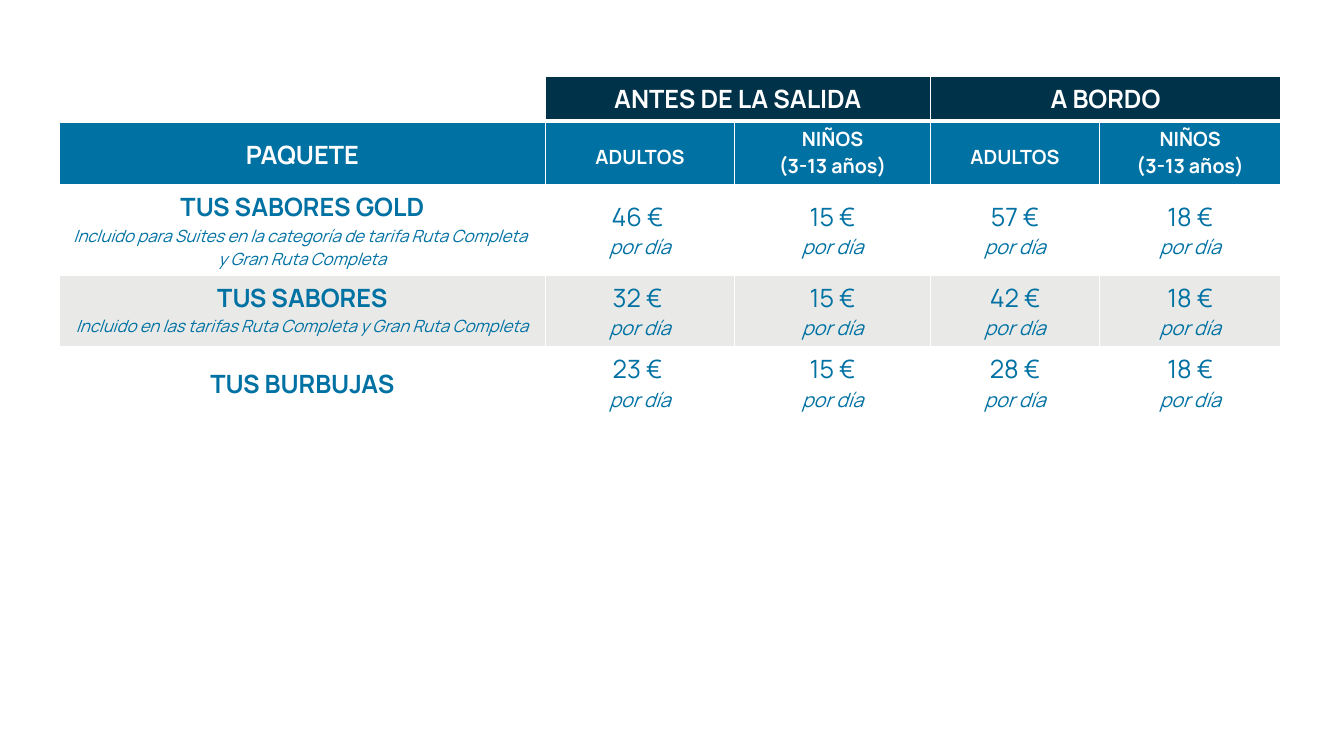
import pptx
import pptx.dml.color
import pptx.enum.text
import pptx.oxml
import pptx.oxml.ns
import pptx.util

Pt = pptx.util.Pt
RGBColor = pptx.dml.color.RGBColor

WHITE = RGBColor(0xFF, 0xFF, 0xFF)
NAVY = RGBColor(0x00, 0x32, 0x4A)
BLUE = RGBColor(0x00, 0x71, 0xA3)
GREY = RGBColor(0xE9, 0xEA, 0xE8)

# Text styles: font attributes
GROUP = {"size": Pt(18), "bold": True, "italic": False}
HEADING = {"size": Pt(14), "bold": True, "italic": False}
PRICE = {"size": Pt(18), "bold": False, "italic": False}
PERIOD = {"size": Pt(14), "bold": False, "italic": True}
NOTE = {"size": Pt(12), "bold": False, "italic": True}


class PriceSlide:
    """Holds the font and the slide, and adds styled elements to it."""

    font_name = "Manrope"
    inset = 3.6

    def __init__(self, presentation):
        self.slide = presentation.slides.add_slide(presentation.slide_layouts[6])

    def table(self, left, top, widths, heights, frame_height):
        frame = self.slide.shapes.add_table(
            len(heights), len(widths), Pt(left), Pt(top), Pt(sum(widths)), Pt(frame_height))
        grid = frame.table
        grid.first_row = grid.horz_banding = False
        for column, width in zip(grid.columns, widths):
            column.width = Pt(width)
        for row, height in zip(grid.rows, heights):
            row.height = Pt(height)
        frame.height = Pt(frame_height)
        return grid

    def cell(self, cell, fill, lines=(), color=BLUE, drop=0, top=1, bottom=1):
        """Fill a cell with (text, style) lines, set lower by drop points."""
        cell.fill.solid()
        cell.fill.fore_color.rgb = fill
        cell.margin_top = Pt(self.inset + drop)
        self.borders(cell, {"lnL": 1, "lnR": 1, "lnT": top, "lnB": bottom})
        frame = cell.text_frame
        for number, (text, style) in enumerate(lines):
            paragraph = frame.add_paragraph() if number else frame.paragraphs[0]
            paragraph.alignment = pptx.enum.text.PP_ALIGN.CENTER
            run = paragraph.add_run()
            run.text = text
            run.font.color.rgb = color
            for name, value in {"name": self.font_name, **style}.items():
                setattr(run.font, name, value)

    def borders(self, cell, widths):
        properties = cell._tc.get_or_add_tcPr()
        for position, (side, width) in enumerate(widths.items()):
            properties.insert(position, pptx.oxml.parse_xml(
                f'<a:{side} {pptx.oxml.ns.nsdecls("a")} w="{Pt(width)}">'
                f'<a:solidFill><a:srgbClr val="{WHITE}"/></a:solidFill></a:{side}>'))


def main():
    presentation = pptx.Presentation()
    presentation.slide_width, presentation.slide_height = Pt(960), Pt(540)
    page = PriceSlide(presentation)
    prices = page.table(42.5, 54.5, [347, 135.4, 139.7, 121, 129.3],
                        [29.5, 29.5, 29.5, 29.5, 15.8], 218.9)

    # Purchase moments, each above two columns
    moments = {1: "ANTES DE LA SALIDA", 3: "A BORDO"}
    for column in range(5):
        lines = [(moments[column], GROUP)] if column in moments else []
        page.cell(prices.cell(0, column), NAVY if column else WHITE, lines, WHITE, bottom=3)
    for column in moments:
        prices.cell(0, column).merge(prices.cell(0, column + 1))

    # Column headings
    package = ([("PAQUETE", GROUP)], 8.2)
    adults = ([("ADULTOS", HEADING)], 12.3)
    children = ([("NIÑOS", HEADING), ("(3-13 años)", HEADING)], 0)
    for column, (lines, drop) in enumerate([package, adults, children, adults, children]):
        page.cell(prices.cell(1, column), BLUE, lines, WHITE, drop, top=3)

    # Packages: name, notes, prices, fill, drop of the name, drop of the prices
    packages = [
        ("TUS SABORES GOLD",
         ["Incluido para Suites en la categoría de tarifa Ruta Completa ",
          "y Gran Ruta Completa"],
         ["46 € ", "15 €", "57 €", "18 €"], WHITE, 0, 6.8),
        ("TUS SABORES",
         ["Incluido en las tarifas Ruta Completa y Gran Ruta Completa"],
         ["32 € ", "15 €", "42 €", "18 €"], GREY, 0, 0),
        ("TUS BURBUJAS", [],
         ["23 € ", "15 €", "28 €", "18 €"], WHITE, 10.9, 0),
    ]
    for row, (name, notes, amounts, fill, name_drop, price_drop) in enumerate(packages, 2):
        title = [(name, GROUP)] + [(note, NOTE) for note in notes]
        page.cell(prices.cell(row, 0), fill, title, drop=name_drop)
        for column, amount in enumerate(amounts, 1):
            page.cell(prices.cell(row, column), fill,
                      [(amount, PRICE), ("por día", PERIOD)], drop=price_drop)

    presentation.save("out.pptx")


if __name__ == "__main__":
    main()
